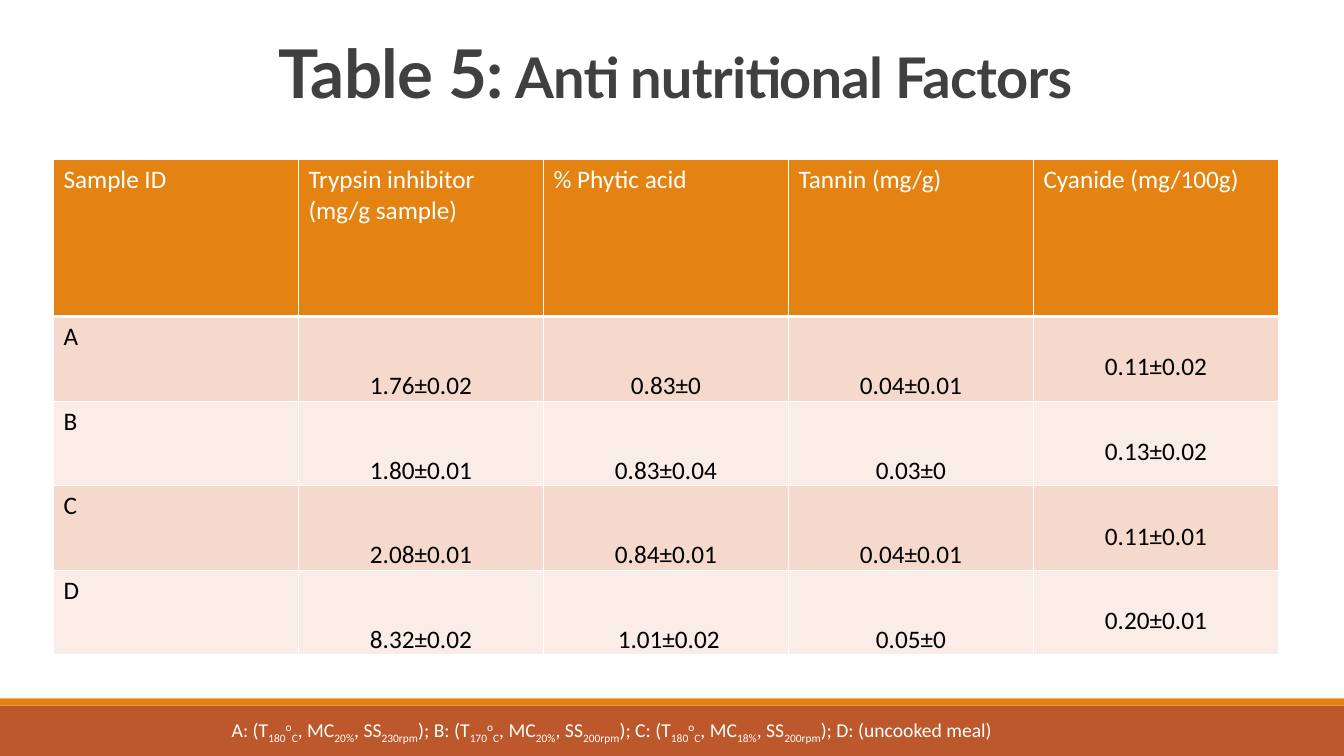
from lxml import etree
from pptx import Presentation, util as u
from pptx.dml import color
from pptx.enum import shapes, text
from pptx.oxml import ns

WIDTH, HEIGHT = 13.33, 7.5
ORANGE, RUST, WHITE, BLACK = "E48312", "BD582C", "FFFFFF", "000000"
BANDS = ["F5D9CC", "FAEDE7"]
HEADINGS = ["Sample ID", "Trypsin inhibitor (mg/g sample)", "% Phytic acid",
            "Tannin (mg/g)", "Cyanide (mg/100g)"]
SAMPLES = [
    ["A", "1.76±0.02", "0.83±0", "0.04±0.01", "0.11±0.02"],
    ["B", "1.80±0.01", "0.83±0.04", "0.03±0", "0.13±0.02"],
    ["C", "2.08±0.01", "0.84±0.01", "0.04±0.01", "0.11±0.01"],
    ["D", "8.32±0.02", " 1.01±0.02", "0.05±0", "0.20±0.01"],
]
TREATMENTS = [("A", "180", "20%", "230rpm"), ("B", "170", "20%", "200rpm"),
              ("C", "180", "18%", "200rpm")]


def rgb(value):
    return color.RGBColor.from_string(value)


def inches(box):
    return [u.Inches(length) for length in box]


def add_span(para, words, size, shade, font="Calibri", bold=False, **marks):
    span = para.add_run()
    span.text = words
    span.font.size = u.Pt(size)
    span.font.name = font
    span.font.bold = bold
    span.font.color.rgb = rgb(shade)
    for name, value in marks.items():
        span.font._element.set(name, str(value))


def add_band(page, box, fill):
    band = page.shapes.add_shape(shapes.MSO_SHAPE.RECTANGLE, *inches(box))
    band.shadow.inherit = False
    band.fill.solid()
    band.fill.fore_color.rgb = rgb(fill)
    band.line.fill.background()


def place_title(page, box):
    title = page.shapes.title
    title.left, title.top, title.width, title.height = inches(box)
    frame = title.text_frame
    frame.auto_size = text.MSO_AUTO_SIZE.NONE
    frame.vertical_anchor = text.MSO_ANCHOR.BOTTOM
    para = frame.paragraphs[0]
    para.alignment = text.PP_ALIGN.CENTER
    para.line_spacing = 0.85
    for words, size in [("Table 5:", 48), (" Anti nutritional Factors", 40)]:
        add_span(para, words, size, "404040", "Lato", True, spc=-50)


def set_borders(cell, bottom):
    properties = cell._tc.get_or_add_tcPr()
    widths = {"lnL": 1, "lnR": 1, "lnT": 1, "lnB": bottom}
    for index, (side, width) in enumerate(widths.items()):
        line = etree.Element(ns.qn("a:" + side), w=str(u.Pt(width)))
        fill = etree.SubElement(line, ns.qn("a:solidFill"))
        etree.SubElement(fill, ns.qn("a:srgbClr"), val=WHITE)
        properties.insert(index, line)


def set_insets(cell, column):
    if column == 4:
        cell.margin_top = u.Inches(0.35)
    elif column:
        cell.vertical_anchor = text.MSO_ANCHOR.BOTTOM
        cell.margin_left = cell.margin_right = cell.margin_top = u.Inches(0.01)
        cell.margin_bottom = 0


def add_factors(page, box):
    rows = [HEADINGS] + SAMPLES
    table = page.shapes.add_table(len(rows), len(HEADINGS), *inches(box)).table
    for column in table.columns:
        column.width = u.Inches(box[2] / len(HEADINGS))
    for r, values in enumerate(rows):
        table.rows[r].height = u.Inches(0.84 if r else box[3] - 0.84 * len(SAMPLES))
        for c, value in enumerate(values):
            cell = table.cell(r, c)
            cell.fill.solid()
            cell.fill.fore_color.rgb = rgb(BANDS[(r - 1) % 2] if r else ORANGE)
            set_borders(cell, 1 if r else 3)
            para = cell.text_frame.paragraphs[0]
            add_span(para, value, 18, BLACK if r else WHITE)
            if r and c:
                para.alignment = text.PP_ALIGN.CENTER
                set_insets(cell, c)


def add_key(page, box):
    frame = page.shapes.add_textbox(*inches(box)).text_frame
    frame.word_wrap = True
    para = frame.paragraphs[0]
    low, high = -25000, 30000
    lead = ""
    for name, heat, moisture, speed in TREATMENTS:
        parts = [(f"{lead}{name}: (T", 0), (heat, low), ("o", high), ("C", low),
                 (", MC", 0), (moisture, low), (", SS", 0), (speed, low)]
        for words, shift in parts:
            add_span(para, words, 14, WHITE, baseline=shift)
        lead = "); "
    add_span(para, lead + "D: (uncooked meal)", 14, WHITE, baseline=0)


def add_footer(page, box):
    left, top, width, height = box
    add_band(page, (left, top + 0.07, width, height - 0.07), RUST)
    add_band(page, (left, top, width, 0.07), ORANGE)
    add_key(page, (left + 2.2, top + 0.14, 9, 0.64))


def build_table_slide(deck):
    page = deck.slides.add_slide(deck.slide_layouts[5])
    add_footer(page, (0, 6.93, WIDTH, HEIGHT - 6.93))
    place_title(page, (1.2, 0.31, 11, 0.85))
    add_factors(page, (0.53, 1.58, 12.15, 4.92))


def main():
    deck = Presentation()
    deck.slide_width, deck.slide_height = inches((WIDTH, HEIGHT))
    build_table_slide(deck)
    deck.save("out.pptx")


if __name__ == "__main__":
    main()
